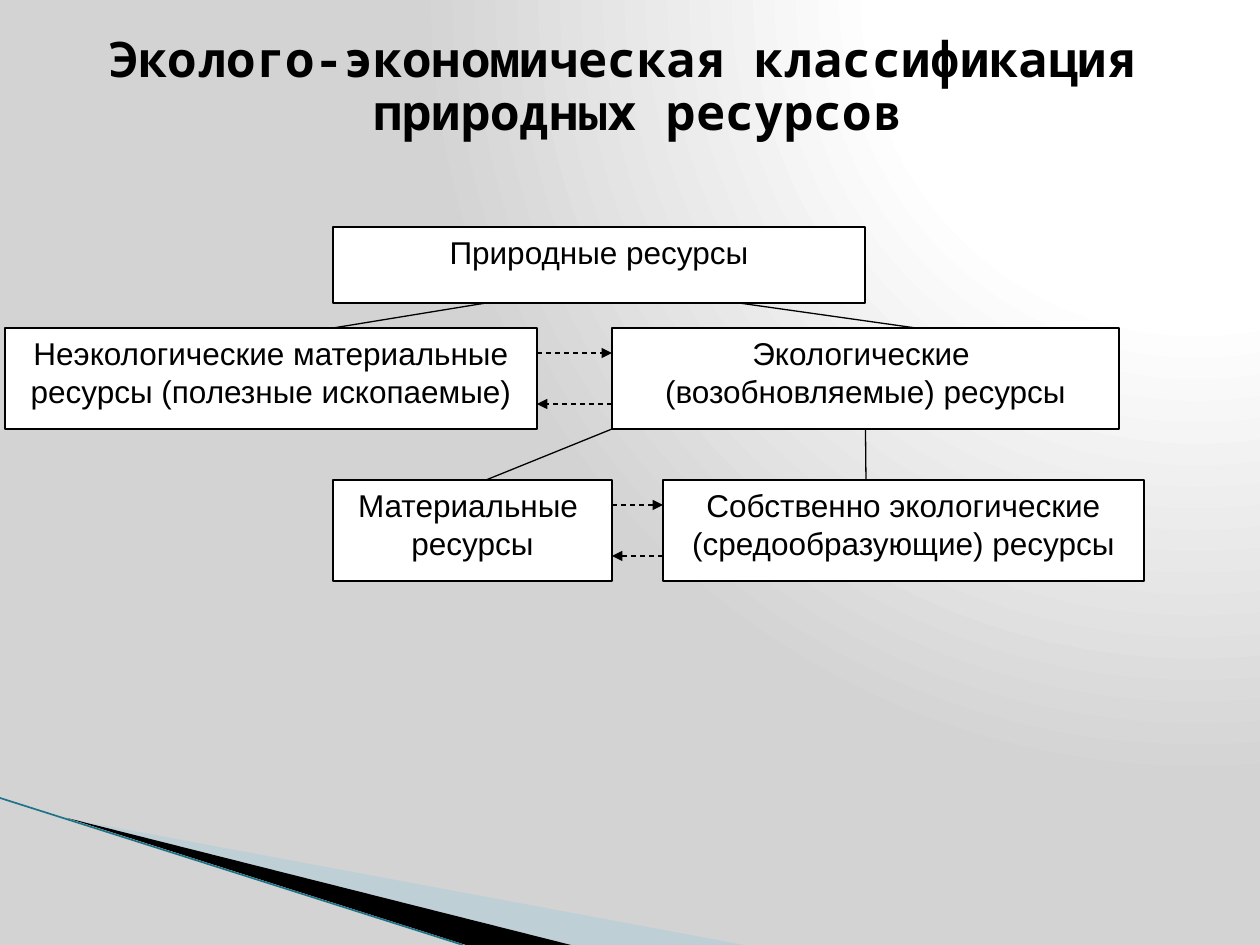
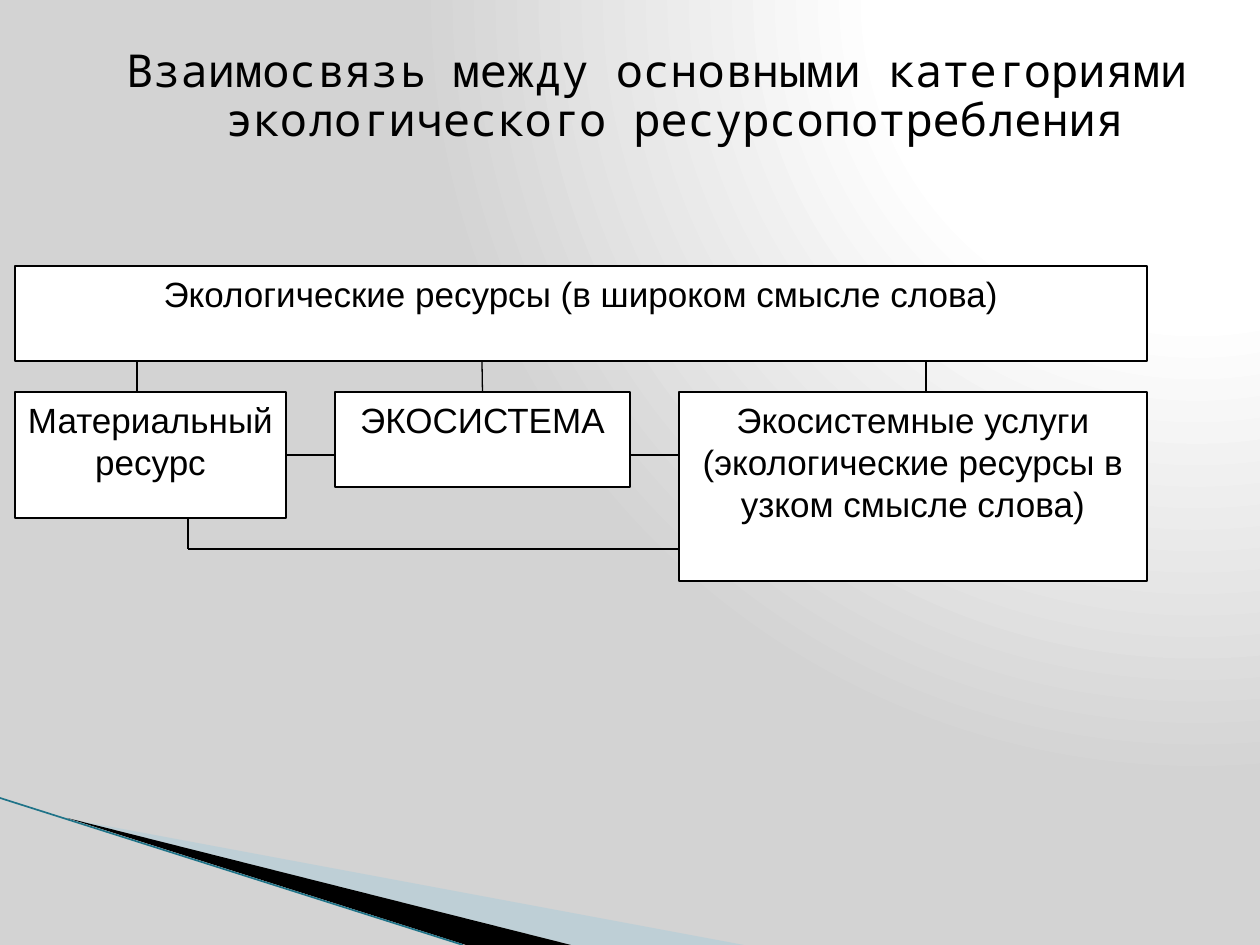
from dataclasses import dataclass
from typing import Any, Optional

from lxml.etree import SubElement
from pptx import Presentation
from pptx.dml.color import RGBColor
from pptx.enum.dml import MSO_LINE_DASH_STYLE as Dash
from pptx.enum.shapes import MSO_CONNECTOR as Connector, MSO_SHAPE as Preset
from pptx.enum.text import MSO_ANCHOR as Anchor, PP_ALIGN as Align
from pptx.oxml import parse_xml
from pptx.oxml.ns import nsdecls, qn
from pptx.util import Emu, Pt

PX_PER_INCH = 126
PAGE_WIDTH, PAGE_HEIGHT = 1260, 945
BLACK, WHITE, GREY = "000000", "FFFFFF", "D3D3D3"
PALE_BLUE, TEAL = "A0CBDC", "1F7388"
TITLE_FONT, BOX_FONT = "Noto Sans Mono", "Arial"
TOP, LEFT, BOTTOM, RIGHT = range(4)

Point = tuple[int, int]
Joint = tuple[str, int]


@dataclass(frozen=True)
class Title:
    lines: tuple[str, ...]
    left: int
    top: int
    width: int
    height: int
    size: float
    bold: bool = False


@dataclass(frozen=True)
class Box:
    name: str
    lines: tuple[str, ...]
    left: int
    top: int
    width: int
    height: int


@dataclass(frozen=True)
class Link:
    start: Point
    end: Point
    dashed: bool = False
    begin_joint: Optional[Joint] = None
    end_joint: Optional[Joint] = None


@dataclass(frozen=True)
class Wedge:
    points: tuple[Point, ...]
    color: str
    opacity: int = 100


@dataclass(frozen=True)
class Scheme:
    title: Title
    box_size: int
    boxes: tuple[Box, ...]
    links: tuple[Link, ...]


def exchange(left: int, right: int, upper: int, lower: int) -> tuple[Link, Link]:
    return (Link((left, upper), (right, upper), dashed=True),
            Link((right, lower), (left, lower), dashed=True))


WEDGES = (
    Wedge(((69, 819), (744, 945), (571, 945)), PALE_BLUE, 40),
    Wedge(((67, 818), (571, 945), (466, 945)), BLACK),
)
EDGE = Link((0, 798), (463, 945))

CLASSIFICATION = Scheme(
    Title(("Эколого-экономическая классификация ", "природных ресурсов"),
          0, 29, 1260, 779, 28, True),
    18,
    (
        Box("natural", ("Природные ресурсы",), 333, 227, 532, 76),
        Box("mineral", ("Неэкологические материальные ресурсы (полезные ископаемые)",),
            5, 328, 532, 101),
        Box("ecological", ("Экологические ", "(возобновляемые) ресурсы"),
            612, 328, 507, 101),
        Box("material", ("Материальные ", "ресурсы"), 333, 480, 279, 101),
        Box("habitat", ("Собственно экологические (средообразующие) ресурсы",),
            663, 480, 481, 101),
    ),
    (
        Link((486, 303), (333, 328)),
        Link((739, 303), (916, 328)),
        *exchange(537, 612, 353, 404),
        *exchange(612, 663, 505, 556),
        Link((612, 429), (486, 480)),
        Link((866, 429), (866, 480), begin_joint=("ecological", BOTTOM)),
    ),
)

CATEGORIES = Scheme(
    Title(("Взаимосвязь между основными категориями экологического ресурсопотребления",),
          39, 42, 1221, 178, 25.9),
    20,
    (
        Box("broad", ("Экологические ресурсы (в широком смысле слова)",),
            15, 266, 1132, 95),
        Box("ecosystem", ("ЭКОСИСТЕМА",), 335, 392, 295, 95),
        Box("material", ("Материальный ", "ресурс"), 15, 392, 271, 126),
        Box("services", ("Экосистемные услуги",
                         "(экологические ресурсы в узком смысле слова)"),
            679, 392, 468, 189),
    ),
    (
        Link((137, 361), (137, 392)),
        Link((482, 361), (482, 392), end_joint=("ecosystem", TOP)),
        Link((926, 361), (926, 392)),
        Link((286, 455), (335, 455), begin_joint=("material", RIGHT)),
        Link((630, 455), (679, 455)),
        Link((679, 549), (188, 549)),
        Link((188, 549), (188, 518)),
    ),
)


def px(length: int) -> Emu:
    return Emu(round(length * 914400 / PX_PER_INCH))


def rgb(value: str) -> RGBColor:
    return RGBColor.from_string(value)


def apply(target: Any, values: dict[str, Any]) -> None:
    for name, value in values.items():
        setattr(target, name, value)


def write(frame: Any, lines: tuple[str, ...], font: dict[str, Any],
          layout: dict[str, Any], hanging: bool = False) -> None:
    apply(frame, {"word_wrap": True, "vertical_anchor": Anchor.TOP})
    for index, line in enumerate(lines):
        para = frame.add_paragraph() if index else frame.paragraphs[0]
        apply(para, {"alignment": Align.CENTER, **layout})
        if hanging:
            apply_indent = para._p.get_or_add_pPr()
            apply_indent.set("marL", str(px(50)))
            apply_indent.set("indent", str(-px(35)))
        span = para.add_run()
        span.text = line
        apply(span.font, font)
        span.font.color.rgb = rgb(BLACK)


def paint_background(page: Any) -> None:
    stops = "".join(
        f'<a:gs pos="{share * 1000}"><a:srgbClr val="{color}"/></a:gs>'
        for share, color in ((0, WHITE), (40, WHITE), (100, GREY)))
    page.element.cSld.insert(0, parse_xml(
        f'<p:bg {nsdecls("p", "a")}><p:bgPr><a:gradFill rotWithShape="1">'
        f'<a:gsLst>{stops}</a:gsLst><a:path path="circle">'
        '<a:fillToRect l="95000" t="-106000" r="5000" b="206000"/></a:path>'
        '</a:gradFill><a:effectLst/></p:bgPr></p:bg>'))


def draw_wedge(page: Any, wedge: Wedge) -> None:
    first, *rest = [(px(x), px(y)) for x, y in wedge.points]
    builder = page.shapes.build_freeform(*first)
    builder.add_line_segments(rest, close=True)
    shape = builder.convert_to_shape()
    shape.shadow.inherit = False
    shape.fill.solid()
    shape.fill.fore_color.rgb = rgb(wedge.color)
    shape.line.fill.background()
    if wedge.opacity < 100:
        color = shape._element.spPr.find(".//" + qn("a:srgbClr"))
        SubElement(color, qn("a:alpha"), val=str(wedge.opacity * 1000))


def draw_title(page: Any, title: Title) -> None:
    shape = page.shapes.add_textbox(
        px(title.left), px(title.top), px(title.width), px(title.height))
    write(shape.text_frame, title.lines,
          {"name": TITLE_FONT, "size": Pt(title.size), "bold": title.bold},
          {"line_spacing": 0.9}, hanging=True)


def draw_box(page: Any, box: Box, size: int) -> Any:
    shape = page.shapes.add_shape(
        Preset.RECTANGLE, px(box.left), px(box.top), px(box.width), px(box.height))
    shape.shadow.inherit = False
    shape.fill.solid()
    shape.fill.fore_color.rgb = rgb(WHITE)
    shape.line.color.rgb = rgb(BLACK)
    shape.line.width = Pt(0.75)
    write(shape.text_frame, box.lines, {"name": BOX_FONT, "size": Pt(size)}, {})
    return shape


def draw_link(page: Any, link: Link, shapes: dict[str, Any],
              color: str = BLACK, width: float = 0.75) -> None:
    line = page.shapes.add_connector(
        Connector.STRAIGHT, *(px(length) for length in link.start + link.end))
    if link.begin_joint:
        name, site = link.begin_joint
        line.begin_connect(shapes[name], site)
    if link.end_joint:
        name, site = link.end_joint
        line.end_connect(shapes[name], site)
    line.line.color.rgb = rgb(color)
    line.line.width = Pt(width)
    if link.dashed:
        line.line.dash_style = Dash.DASH
        SubElement(line.line._get_or_add_ln(), qn("a:tailEnd"), type="triangle")
    SubElement(line._element.spPr, qn("a:effectLst"))


def draw_page(deck: Any, scheme: Scheme) -> None:
    page = deck.slides.add_slide(deck.slide_layouts[6])
    paint_background(page)
    for wedge in WEDGES:
        draw_wedge(page, wedge)
    draw_link(page, EDGE, {}, TEAL, 0.95)
    draw_title(page, scheme.title)
    shapes = {box.name: draw_box(page, box, scheme.box_size) for box in scheme.boxes}
    for link in scheme.links:
        draw_link(page, link, shapes)


def main() -> None:
    deck = Presentation()
    apply(deck, {"slide_width": px(PAGE_WIDTH), "slide_height": px(PAGE_HEIGHT)})
    for scheme in (CLASSIFICATION, CATEGORIES):
        draw_page(deck, scheme)
    deck.save("out.pptx")


if __name__ == "__main__":
    main()
